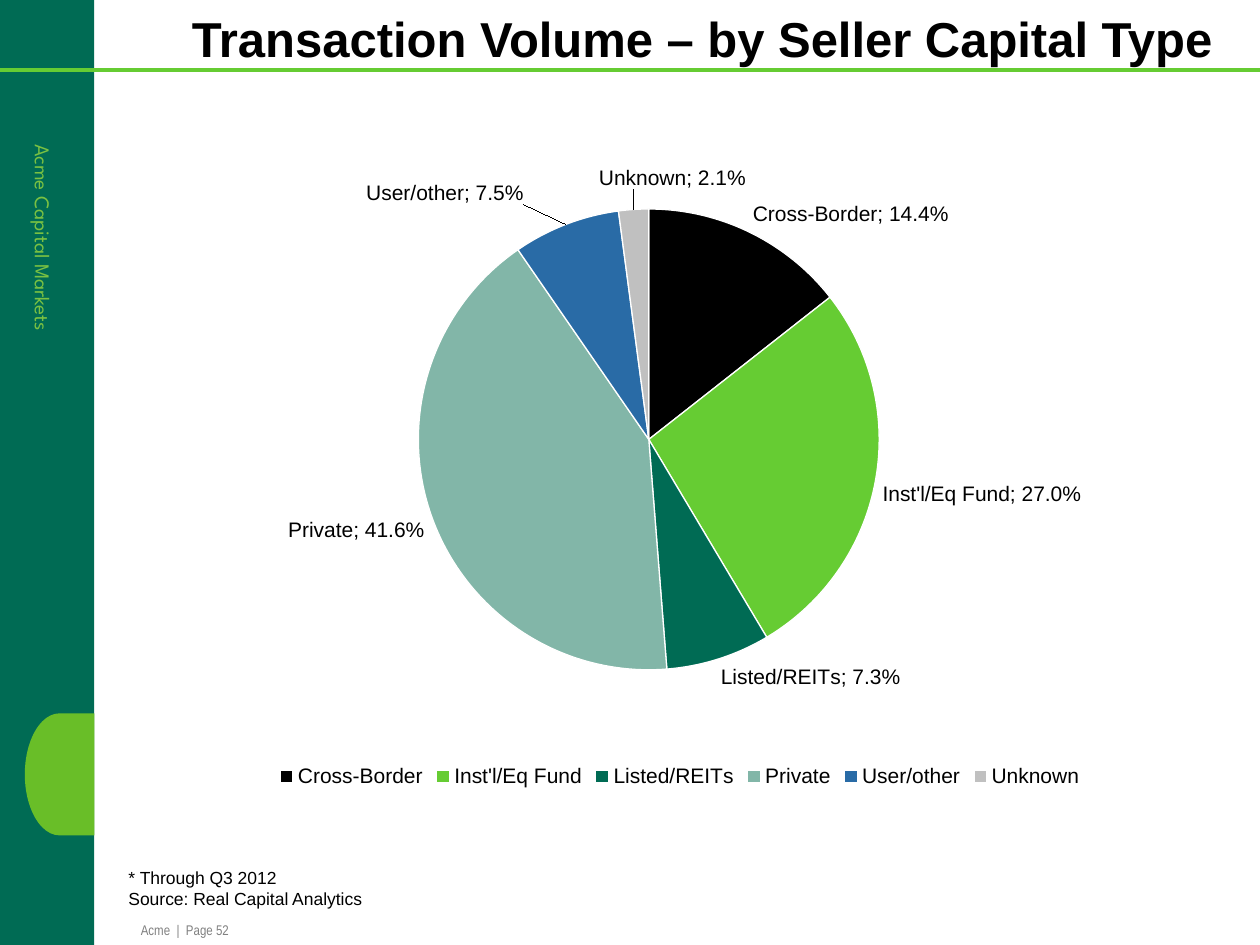
from copy import deepcopy
from dataclasses import dataclass, field

from lxml import etree
from pptx import Presentation
from pptx.chart.data import CategoryChartData
from pptx.dml.color import RGBColor
from pptx.enum.chart import XL_CHART_TYPE, XL_LABEL_POSITION, XL_LEGEND_POSITION
from pptx.enum.shapes import MSO_CONNECTOR, MSO_SHAPE
from pptx.enum.text import MSO_ANCHOR, MSO_AUTO_SIZE, PP_ALIGN
from pptx.oxml.ns import qn
from pptx.util import Cm, Pt

PIE = XL_CHART_TYPE.PIE
OUTER = XL_LABEL_POSITION.OUTSIDE_END
BELOW = XL_LEGEND_POSITION.BOTTOM
LINE = MSO_CONNECTOR.STRAIGHT
RECT, DELAY = MSO_SHAPE.RECTANGLE, MSO_SHAPE.FLOWCHART_DELAY
TOP, BOTTOM = MSO_ANCHOR.TOP, MSO_ANCHOR.BOTTOM
FIXED = MSO_AUTO_SIZE.NONE
LEFT, RIGHT = PP_ALIGN.LEFT, PP_ALIGN.RIGHT

BLACK = RGBColor(0x00, 0x00, 0x00)
WHITE = RGBColor(0xFF, 0xFF, 0xFF)
GREEN = RGBColor(0x00, 0x6B, 0x54)
LIME = RGBColor(0x66, 0xCC, 0x33)
LEAF = RGBColor(0x69, 0xBE, 0x28)
MOSS = RGBColor(0x7A, 0xC1, 0x42)
SAGE = RGBColor(0x82, 0xB6, 0xA8)
BLUE = RGBColor(0x29, 0x6B, 0xA6)
SILVER = RGBColor(0xC0, 0xC0, 0xC0)
GREY = RGBColor(0x80, 0x80, 0x80)


@dataclass
class Block:
    """A plain filled shape; lengths in cm."""
    kind: int
    box: tuple
    fill: RGBColor
    turn: float = 0


@dataclass
class Label:
    """A text box; lengths in cm."""
    text: str
    box: tuple
    size: float
    face: str
    color: RGBColor
    turn: float = 0
    wrap: bool = False
    pad: tuple = (0, 0)


@dataclass
class Slice:
    """A pie slice; shift moves its label by a share of the chart."""
    name: str
    share: float
    color: RGBColor
    shift: tuple = field(default=())


BLOCKS = [
    Block(RECT, (0, 0, 1.9, 19.05), GREEN),
    Block(DELAY, (0.5, 14.38, 1.4, 2.46), LEAF, 180),
]
LABELS = [
    Label("Acme  |  Page 52", (2.84, 18.57, 3.76, 0.43), 8, "Arial Narrow", GREY),
    Label("Acme Capital Markets", (-0.97, 4.57, 3.76, 0.43), 12,
          "League Spartan", MOSS, turn=90),
    Label("* Through Q3 2012\vSource: Real Capital Analytics",
          (2.34, 17.35, 13.2, 1.1), 10, "Arial", BLACK, wrap=True, pad=(0.25, 0.13)),
]
SLICES = [
    Slice("Cross-Border", 0.144, BLACK),
    Slice("Inst'l/Eq Fund", 0.27, LIME),
    Slice("Listed/REITs", 0.073, GREEN),
    Slice("Private", 0.416, SAGE),
    Slice("User/other", 0.075, BLUE, (-0.035, -0.02)),
    Slice("Unknown", 0.021, SILVER, (0.035, -0.02)),
]


def apply(item, **values) -> None:
    for name, value in values.items():
        setattr(item, name, value)


def style(font, size: float, face: str, color: RGBColor, bold: bool = False) -> None:
    apply(font, size=Pt(size), name=face, bold=bold)
    font.color.rgb = color


def cms(box: tuple) -> list:
    return [Cm(n) for n in box]


def set_text(shape, text: str, pad: tuple, wrap: bool, anchor, align):
    frame = shape.text_frame
    side, edge = cms(pad)
    apply(frame, text=text, word_wrap=wrap, auto_size=FIXED, vertical_anchor=anchor,
          margin_left=side, margin_right=side, margin_top=edge, margin_bottom=edge)
    para = frame.paragraphs[0]
    para.alignment = align
    return para


def add_block(slide, block: Block) -> None:
    shape = slide.shapes.add_shape(block.kind, *cms(block.box))
    shape.rotation = block.turn
    shape.shadow.inherit = False
    shape.fill.solid()
    shape.fill.fore_color.rgb = block.fill
    shape.line.fill.background()


def add_label(slide, label: Label) -> None:
    shape = slide.shapes.add_textbox(*cms(label.box))
    shape.rotation = label.turn
    para = set_text(shape, label.text, label.pad, label.wrap, TOP, LEFT)
    style(para.font, label.size, label.face, label.color)


def add_rule(slide, y: float) -> None:
    rule = slide.shapes.add_connector(LINE, *cms((0, y, 25.4, y)))
    rule.line.color.rgb = LIME
    rule.line.width = Pt(2.25)
    etree.SubElement(rule._element.spPr, qn("a:effectLst"))


def make_layout(**values):
    layout = etree.Element(qn("c:layout"))
    manual = etree.SubElement(layout, qn("c:manualLayout"))
    for tag, value in values.items():
        etree.SubElement(manual, qn("c:" + tag)).set("val", str(value))
    return layout


def shift_label(group, index: int, shift: tuple) -> None:
    """Give one slice the shared label format and its own place."""
    mark = etree.Element(qn("c:dLbl"))
    etree.SubElement(mark, qn("c:idx")).set("val", str(index))
    mark.append(make_layout(x=shift[0], y=shift[1]))
    skip = (qn("c:dLbl"), qn("c:showLeaderLines"))
    mark.extend([deepcopy(part) for part in group if part.tag not in skip])
    group.insert(len(group.findall(qn("c:dLbl"))), mark)


def add_pie(slide, slices: list) -> None:
    data = CategoryChartData(number_format="0.0%")
    data.categories = [part.name for part in slices]
    data.add_series("Series 1", [part.share for part in slices])
    box = cms((2.34, 2.95, 22.73, 13.03))
    chart = slide.shapes.add_chart(PIE, *box, data).chart
    apply(chart, has_title=False, has_legend=True)
    style(chart.font, 10, "Arial", BLACK)
    apply(chart.legend, position=BELOW, include_in_layout=False)
    style(chart.legend.font, 12, "Arial", BLACK)

    # Plot area
    area = chart._chartSpace.chart.plotArea
    for old in area.findall(qn("c:layout")):
        area.remove(old)
    area.insert(0, make_layout(layoutTarget="inner", xMode="edge", yMode="edge",
                               x=0.262, y=0.097, w=0.421, h=0.713))

    # Labels
    series = chart.plots[0].series[0]
    labels = series.data_labels
    apply(labels, show_value=True, show_category_name=True, show_percentage=False,
          number_format="0.0%", number_format_is_linked=False, position=OUTER)
    style(labels.font, 12, "Arial", BLACK)
    group = labels._element
    gap = etree.Element(qn("c:separator"))
    gap.text = "; "
    group.find(qn("c:showBubbleSize")).addnext(gap)

    # Slices
    for index, part in enumerate(slices):
        form = series.points[index].format
        form.fill.solid()
        form.fill.fore_color.rgb = part.color
        form.line.color.rgb = WHITE
        form.line.width = Pt(0.75)
        if part.shift:
            shift_label(group, index, part.shift)


def main() -> None:
    deck = Presentation()
    apply(deck, slide_width=Cm(25.4), slide_height=Cm(19.05))
    slide = deck.slides.add_slide(deck.slide_layouts[5])

    # Side band and rule
    for block in BLOCKS:
        add_block(slide, block)
    add_rule(slide, 1.42)

    # Title
    title = slide.shapes.title
    left, top, width, height = cms((2.84, 0.15, 21.6, 1.2))
    apply(title, left=left, top=top, width=width, height=height)
    para = set_text(title, "Transaction Volume – by Seller Capital Type",
                    (0, 0), True, BOTTOM, RIGHT)
    style(para.font, 28, "Arial", BLACK, True)

    # Texts and chart
    for label in LABELS:
        add_label(slide, label)
    add_pie(slide, SLICES)
    deck.save("out.pptx")


if __name__ == "__main__":
    main()
